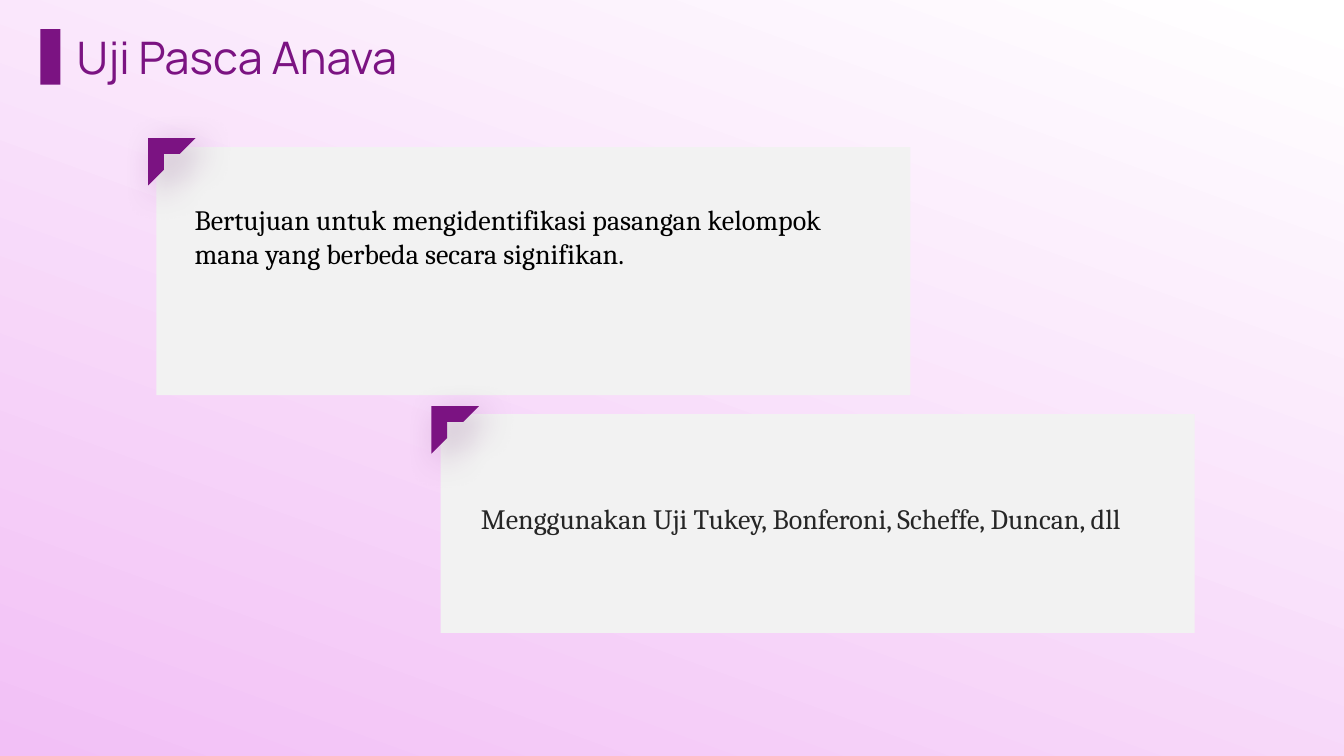
from lxml.etree import SubElement
from pptx import Presentation
from pptx.dml.color import RGBColor
from pptx.enum.shapes import MSO_SHAPE as Shape
from pptx.enum.text import MSO_ANCHOR as Anchor, MSO_AUTO_SIZE as AutoSize, PP_ALIGN as Align
from pptx.oxml.ns import qn
from pptx.util import Inches, Pt

PURPLE = "7B1382"
PANEL_GREY = "F2F2F2"

PANELS = [
    {"panel": (1.55, 1.46, 7.48, 2.46), "corner": (1.47, 1.37), "text_box": (1.93, 2.01, 6.69, 1.86),
     "text": "Bertujuan untuk mengidentifikasi pasangan kelompok mana yang berbeda secara signifikan.",
     "color": "000000"},
    {"panel": (4.37, 4.11, 7.48, 2.17), "corner": (4.28, 4.03), "text_box": (4.77, 4.98, 6.69, 1.18),
     "text": "Menggunakan Uji Tukey, Bonferoni, Scheffe, Duncan, dll",
     "color": "262626"},
]


def rgb(color):
    return RGBColor.from_string(color)


def add_plain_shape(slide, kind, box, color):
    shape = slide.shapes.add_shape(kind, *map(Inches, box))
    shape.shadow.inherit = False
    shape.line.fill.background()
    shape.fill.solid()
    shape.fill.fore_color.rgb = rgb(color)
    return shape


def add_backdrop(slide):
    backdrop = add_plain_shape(slide, Shape.RECTANGLE, (0, 0, 13.36, 7.52), "FFFFFF")
    backdrop.fill.gradient()
    backdrop.fill.gradient_angle = 70
    stops = ((0, "F2C0F6"), (0.99, "FFFFFF"))
    for stop, (position, color) in zip(backdrop.fill.gradient_stops, stops):
        stop.position = position
        stop.color.rgb = rgb(color)


def add_corner(slide, left, top):
    corner = add_plain_shape(slide, Shape.HALF_FRAME, (left, top, 0.47, 0.47), PURPLE)
    effects = corner._element.spPr.find(qn("a:effectLst"))
    shadow = SubElement(effects, qn("a:outerShdw"), blurRad=str(Pt(25)), dist=str(Pt(10)),
                        dir=str(45 * 60000), algn="tl", rotWithShape="0")
    color = SubElement(shadow, qn("a:srgbClr"), val="5C0E62")
    SubElement(color, qn("a:alpha"), val="30000")


def write_text(shape, text, font, anchor=Anchor.TOP):
    frame = shape.text_frame
    frame_format = {"word_wrap": True, "auto_size": AutoSize.NONE, "vertical_anchor": anchor,
                    "margin_left": 0, "margin_top": 0, "margin_right": 0, "margin_bottom": 0}
    for name, value in frame_format.items():
        setattr(frame, name, value)
    paragraph = frame.paragraphs[0]
    paragraph.alignment = Align.LEFT
    run = paragraph.add_run()
    run.text = text
    for name, value in font.items():
        if name == "color":
            run.font.color.rgb = rgb(value)
        else:
            setattr(run.font, name, value)


def add_text(slide, box, text, font):
    write_text(slide.shapes.add_textbox(*map(Inches, box)), text, font)


def place_title(slide, box, text):
    """Format the title placeholder and bring it in front of the backdrop."""
    title = slide.shapes.title
    title.left, title.top, title.width, title.height = map(Inches, box)
    write_text(title, text, {"name": "Manrope", "size": Pt(32), "color": PURPLE}, Anchor.MIDDLE)
    slide.shapes._spTree.append(title._element)


def main():
    presentation = Presentation()
    presentation.slide_width = Inches(13.33)
    presentation.slide_height = Inches(7.5)
    slide = presentation.slides.add_slide(presentation.slide_layouts[5])

    add_backdrop(slide)
    for item in PANELS:
        add_plain_shape(slide, Shape.RECTANGLE, item["panel"], PANEL_GREY)
    for item in PANELS:
        add_corner(slide, *item["corner"])
    for item in PANELS:
        add_text(slide, item["text_box"], item["text"],
                 {"name": "Cambria", "size": Pt(20), "color": item["color"]})
    place_title(slide, (0.76, 0.33, 11.64, 0.47), "Uji Pasca Anava")
    add_plain_shape(slide, Shape.RECTANGLE, (0.4, 0.29, 0.2, 0.55), PURPLE)

    presentation.save("out.pptx")


if __name__ == "__main__":
    main()
